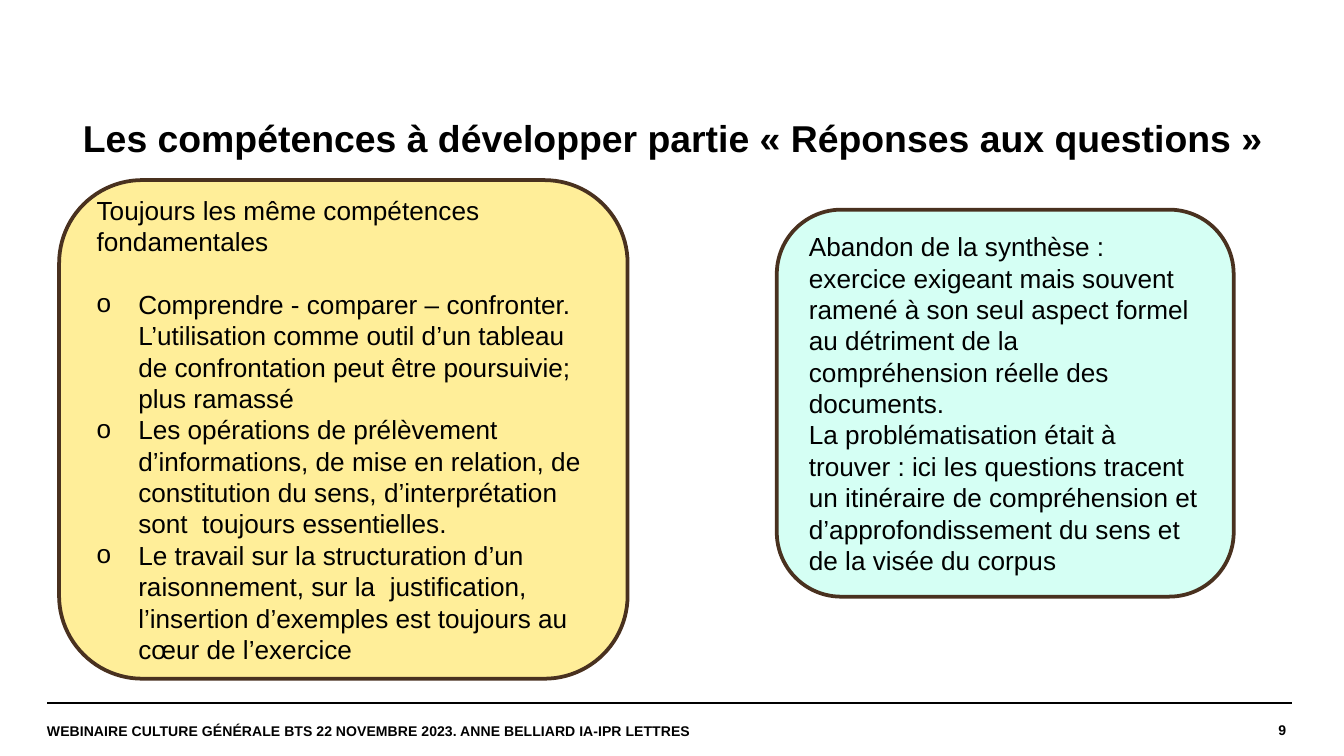
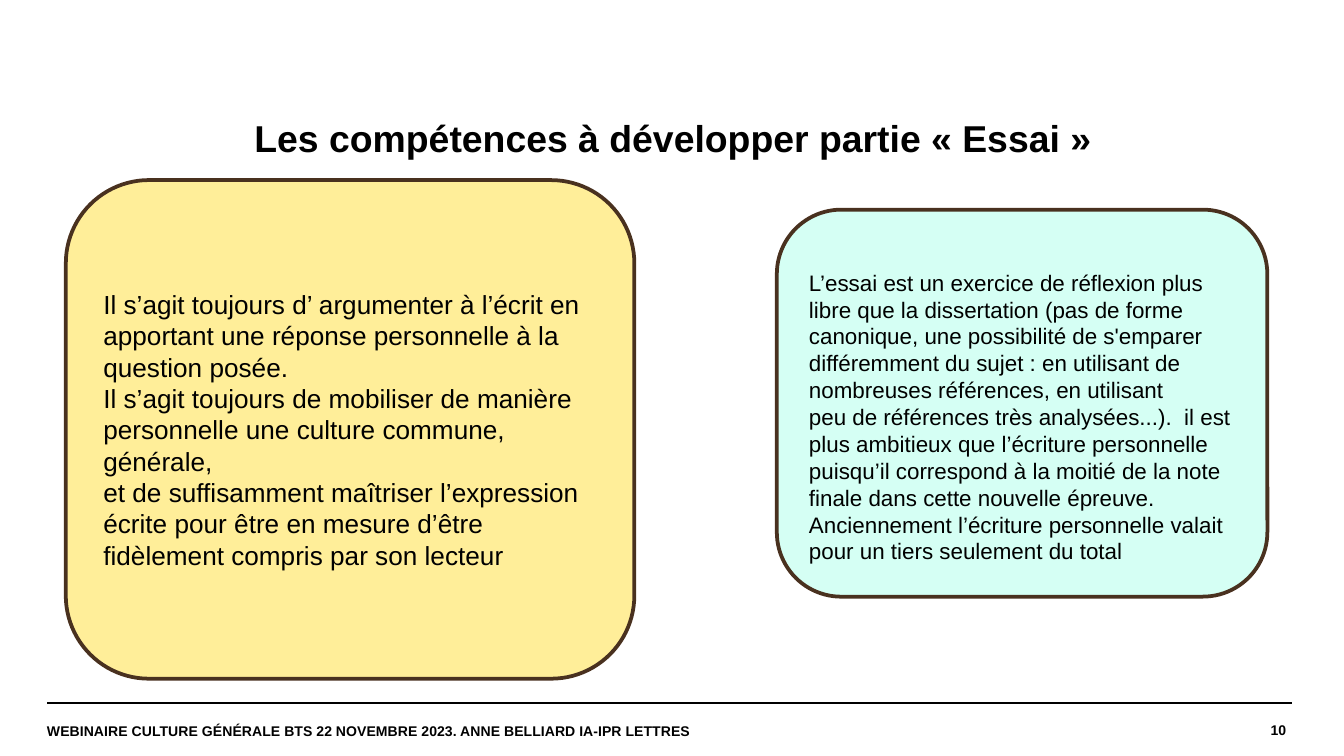
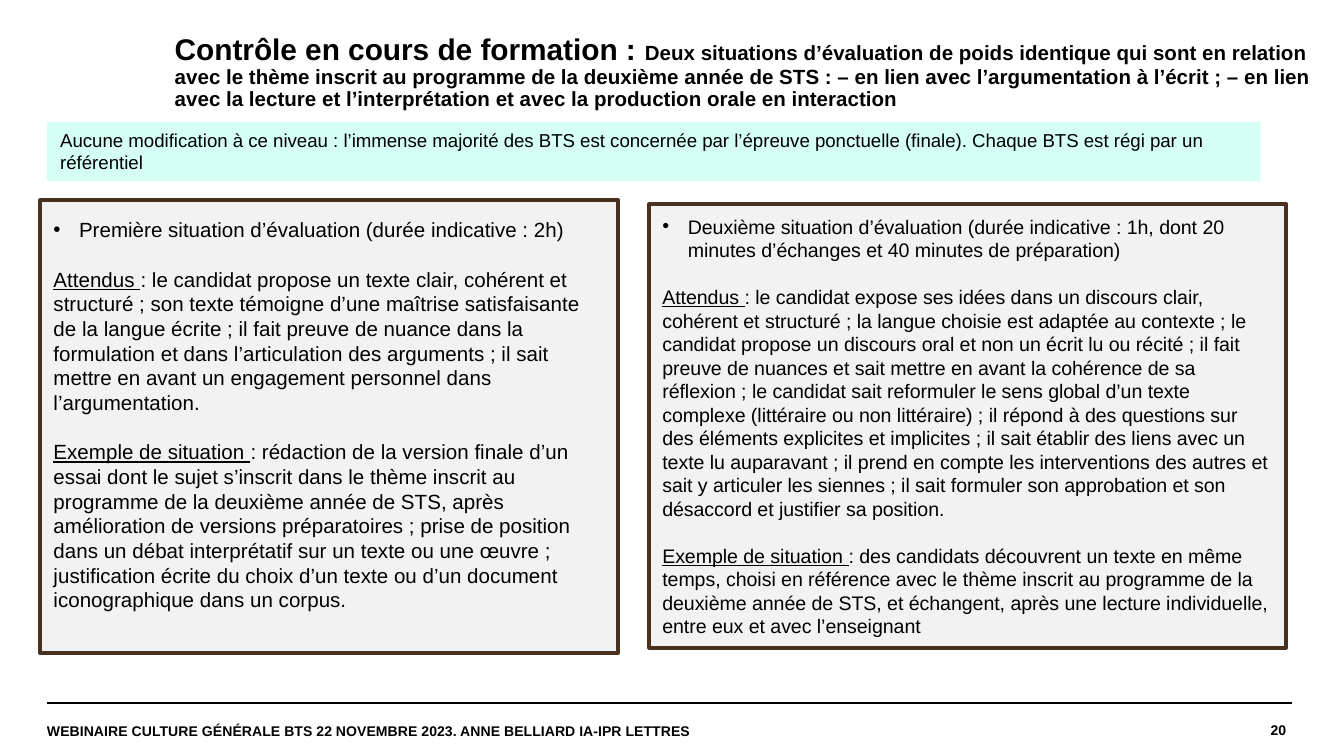
import pptx
import pptx.dml.color
import pptx.enum.shapes
import pptx.enum.text
import pptx.oxml.ns
import pptx.util
from lxml import etree

Inches = pptx.util.Inches
Pt = pptx.util.Pt
Shape = pptx.enum.shapes.MSO_SHAPE
Align = pptx.enum.text.PP_ALIGN
Anchor = pptx.enum.text.MSO_ANCHOR
qn = pptx.oxml.ns.qn

FONT = "Arial"
BLACK, BROWN = "000000", "49311F"
YELLOW, MINT, GREY = "FFEE99", "D5FFF4", "F2F2F2"
TITLE_BOX = (0, 0.75, 10, 0.59)
FOOTER_BOX = (0.35, 5.23, 9.22, 0.4)
LINE_HEIGHT = 1.2
FOOTER = "WEBINAIRE CULTURE GÉNÉRALE BTS 22 NOVEMBRE 2023. ANNE BELLIARD IA-IPR LETTRES"


def color(value):
    return pptx.dml.color.RGBColor.from_string(value)


def place(shape, box):
    shape.left, shape.top, shape.width, shape.height = map(Inches, box)


def set_margins(frame, left=0.1, top=0.05, right=0.1, bottom=0.05):
    frame.margin_left, frame.margin_right = Inches(left), Inches(right)
    frame.margin_top, frame.margin_bottom = Inches(top), Inches(bottom)


def write(frame, text, size=14, bold=False, align=Align.LEFT, bullet=None,
          hang=0, indent=0, spacing=None, gap=False):
    para = frame.paragraphs[0]
    if para.runs:
        para = frame.add_paragraph()
    properties = para._p.get_or_add_pPr()
    if bullet:
        properties.set("marL", str(Inches(hang)))
        properties.set("indent", str(-Inches(hang)))
        etree.SubElement(properties, qn("a:buFont")).set("typeface", FONT)
        etree.SubElement(properties, qn("a:buChar")).set("char", bullet)
    elif indent:
        properties.set("marL", str(Inches(indent)))
        properties.set("indent", "0")
    para.alignment = align
    if spacing:
        para.line_spacing = spacing
    if gap:
        para.space_before = Pt(round(size * LINE_HEIGHT, 1))
    spans = [(text, {})] if isinstance(text, str) else text
    for words, changes in spans:
        for number, line in enumerate(words.split("\n")):
            if number:
                para.add_line_break()
            span = para.add_run()
            span.text = line
            font = span.font
            font.name = FONT
            font.size = Pt(changes.get("size", size))
            font.bold = bold
            font.color.rgb = color(BLACK)
            if changes.get("underline"):
                font.underline = True


def add_panel(page, box, fill, kind=Shape.RECTANGLE, outline=BROWN, anchor=Anchor.MIDDLE):
    panel = page.shapes.add_shape(kind, *map(Inches, box))
    panel.shadow.inherit = False
    panel.fill.solid()
    panel.fill.fore_color.rgb = color(fill)
    if outline:
        panel.line.color.rgb = color(outline)
        panel.line.width = Pt(2)
    else:
        panel.line.fill.background()
    frame = panel.text_frame
    frame.word_wrap = True
    frame.vertical_anchor = anchor
    set_margins(frame)
    return frame


def add_label(page, box, text, align=Align.LEFT):
    frame = page.shapes.add_textbox(*map(Inches, box)).text_frame
    frame.word_wrap = True
    frame.vertical_anchor = Anchor.MIDDLE
    set_margins(frame, 0, 0, 0, 0)
    write(frame, text, size=7.5, bold=True, align=align)


def add_footer(page, box, number):
    left, top, width, height = box
    for shift in (0, 0.04):
        rule = page.shapes.add_connector(
            pptx.enum.shapes.MSO_CONNECTOR.STRAIGHT,
            Inches(left + shift), Inches(top), Inches(left + shift + width), Inches(top))
        rule.line.color.rgb = color(BLACK)
        rule.line.width = Pt(0.8)
        etree.SubElement(rule._element.spPr, qn("a:effectLst"))
    add_label(page, (left + width - 1.48, top, 1.48, height), str(number), Align.RIGHT)
    add_label(page, (left, top + 0.02, 5.17, 0.38), FOOTER)


def add_page(deck, number, title, box=TITLE_BOX, size=20, align=Align.CENTER):
    page = deck.slides.add_slide(deck.slide_layouts.get_by_name("Title Only"))
    add_footer(page, FOOTER_BOX, number)
    place(page.shapes.title, box)
    frame = page.shapes.title.text_frame
    frame.word_wrap = True
    frame.auto_size = pptx.enum.text.MSO_AUTO_SIZE.NONE
    frame.vertical_anchor = Anchor.MIDDLE
    set_margins(frame)
    write(frame, title, size=size, bold=True, align=align, indent=0.02, spacing=0.9)
    return page


def add_card(page, box, fill, texts, size=14):
    frame = add_panel(page, box, fill, Shape.ROUNDED_RECTANGLE)
    for text in texts:
        write(frame, text, size=size)
    return frame


def add_situation(page, box, heading, expected, example, size):
    frame = add_panel(page, box, GREY)
    write(frame, heading, size=size, bullet="•", hang=0.19)
    for label, text in (("Attendus ", expected), ("Exemple de situation ", example)):
        write(frame, [(label, {"underline": True}), (": " + text, {})], size=size, gap=True)
    return frame


def add_answers_page(deck):
    page = add_page(deck, 9, "Les compétences à développer partie « Réponses aux questions »")
    skills = add_card(page, (0.44, 1.34, 4.23, 3.71), YELLOW,
                      ["Toujours les même compétences fondamentales"])
    for number, skill in enumerate((
        "Comprendre - comparer – confronter. L’utilisation comme outil d’un tableau de "
        "confrontation peut être poursuivie; plus ramassé",
        "Les opérations de prélèvement d’informations, de mise en relation, de constitution "
        "du sens, d’interprétation sont  toujours essentielles.",
        "Le travail sur la structuration d’un raisonnement, sur la  justification, "
        "l’insertion d’exemples est toujours au cœur de l’exercice",
    )):
        write(skills, skill, bullet="o", hang=0.31, gap=number == 0)
    add_card(page, (5.78, 1.56, 3.4, 2.88), MINT, [
        "Abandon de la synthèse : exercice exigeant mais souvent ramené à son seul aspect "
        "formel au détriment de la compréhension réelle des documents.",
        "La problématisation était à trouver : ici les questions tracent un itinéraire de "
        "compréhension et d’approfondissement du sens et de la visée du corpus",
    ])


def add_essay_page(deck):
    page = add_page(deck, 10, "Les compétences à développer partie « Essai »")
    add_card(page, (0.49, 1.34, 4.23, 3.71), YELLOW, [
        "Il s’agit toujours d’ argumenter à l’écrit en apportant une réponse personnelle à "
        "la question posée.",
        "Il s’agit toujours de mobiliser de manière personnelle une culture commune, générale,",
        "et de suffisamment maîtriser l’expression écrite pour être en mesure d’être "
        "fidèlement compris par son lecteur",
    ])
    essay = add_card(page, (5.78, 1.56, 3.65, 2.88), MINT, [
        "L’essai est un exercice de réflexion plus libre que la dissertation (pas de forme "
        "canonique, une possibilité de s'emparer différemment du sujet : en utilisant de "
        "nombreuses références, en utilisant\npeu de références très analysées...).  il est "
        "plus ambitieux que l’écriture personnelle puisqu’il correspond à la moitié de la "
        "note finale dans cette nouvelle épreuve. Anciennement l’écriture personnelle valait "
        "pour un tiers seulement du total",
    ], size=12)
    set_margins(essay, top=0.25)


def add_assessment_page(deck):
    page = add_page(deck, 20, [
        ("Contrôle en cours de formation : ", {}),
        ("Deux situations d’évaluation de poids identique qui sont en relation avec le thème "
         "inscrit au programme de la deuxième année de STS : – en lien avec l’argumentation "
         "à l’écrit ; – en lien avec la lecture et l’interprétation et avec la production "
         "orale en interaction", {"size": 11}),
    ], box=(1.18, 0.12, 8.82, 0.84), size=16, align=Align.LEFT)
    first = add_situation(
        page, (0.3, 1.49, 4.3, 3.37),
        "Première situation d’évaluation (durée indicative : 2h)",
        "le candidat propose un texte clair, cohérent et\nstructuré ; son texte témoigne "
        "d’une maîtrise satisfaisante de la langue écrite ; il fait preuve de nuance dans la "
        "formulation et dans l’articulation des arguments ; il sait mettre en avant un "
        "engagement personnel dans l’argumentation.",
        "rédaction de la version finale d’un essai dont le sujet s’inscrit dans le thème "
        "inscrit au programme de la deuxième année de STS, après amélioration de versions "
        "préparatoires ; prise de position dans un débat interprétatif sur un texte ou une "
        "œuvre ; justification écrite du choix d’un texte ou d’un document iconographique "
        "dans un corpus.", 11)
    set_margins(first, bottom=0.23)
    add_situation(
        page, (4.83, 1.52, 4.74, 3.3),
        "Deuxième situation d’évaluation (durée indicative : 1h, dont 20 minutes d’échanges "
        "et 40 minutes de préparation)",
        "le candidat expose ses idées dans un discours clair, cohérent et structuré ; la "
        "langue choisie est adaptée au contexte ; le candidat propose un discours oral et "
        "non un écrit lu ou récité ; il fait preuve de nuances et sait mettre en avant la "
        "cohérence de sa réflexion ; le candidat sait reformuler le sens global d’un texte "
        "complexe (littéraire ou non littéraire) ; il répond à des questions sur des "
        "éléments explicites et implicites ; il sait établir des liens avec un texte lu "
        "auparavant ; il prend en compte les interventions des autres et sait y articuler "
        "les siennes ; il sait formuler son approbation et son désaccord et justifier sa "
        "position.",
        "des candidats découvrent un texte en même temps, choisi en référence avec le thème "
        "inscrit au programme de la deuxième année de STS, et échangent, après une lecture "
        "individuelle, entre eux et avec l’enseignant", 10.5)
    banner = add_panel(page, (0.35, 0.91, 9.03, 0.44), MINT, outline=None, anchor=Anchor.TOP)
    write(banner, "Aucune modification à ce niveau : l’immense majorité des BTS est concernée "
          "par l’épreuve ponctuelle (finale). Chaque BTS est régi par un référentiel", size=10)


def main():
    deck = pptx.Presentation()
    deck.slide_width = Inches(10)
    deck.slide_height = deck.slide_width * 9 // 16
    add_answers_page(deck)
    add_essay_page(deck)
    add_assessment_page(deck)
    deck.save("out.pptx")


if __name__ == "__main__":
    main()
